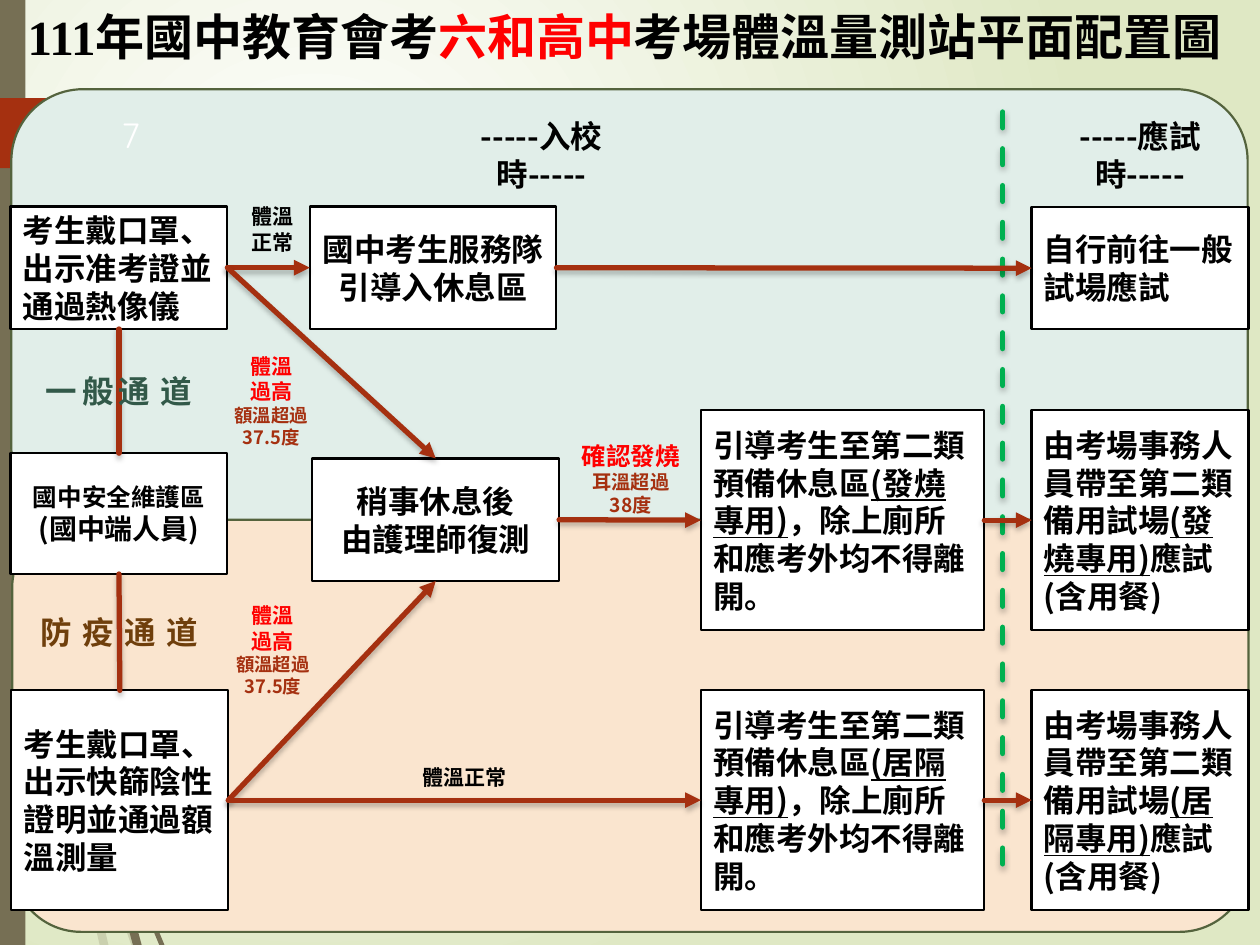
"""Builds the exam-site temperature screening flow chart slide."""
from dataclasses import dataclass
from typing import Optional

from lxml import etree
from pptx import Presentation
from pptx.dml.color import RGBColor
from pptx.enum import dml, shapes, text
from pptx.oxml import ns
from pptx.util import Pt

BLACK = RGBColor(0x00, 0x00, 0x00)
WHITE = RGBColor(0xFF, 0xFF, 0xFF)
RED = RGBColor(0xFF, 0x00, 0x00)
RUST = RGBColor(0xA5, 0x30, 0x10)
GREEN = RGBColor(0x00, 0xB0, 0x50)
OLIVE = RGBColor(0x54, 0x63, 0x3D)
TAUPE = RGBColor(0x76, 0x6F, 0x54)
PALE_TAUPE = RGBColor(0xCA, 0xD0, 0xAE)
PALE_LIME = RGBColor(0xDF, 0xE8, 0xC4)
MINT = RGBColor(0xE1, 0xEE, 0xE9)
PEACH = RGBColor(0xFA, 0xE5, 0xCF)
PINE = RGBColor(0x32, 0x59, 0x49)
BROWN = RGBColor(0x6F, 0x3F, 0x0C)

CJK = "Noto Sans CJK JP"
LEFT, CENTER, RIGHT = text.PP_ALIGN.LEFT, text.PP_ALIGN.CENTER, text.PP_ALIGN.RIGHT
TOP, MIDDLE = text.MSO_ANCHOR.TOP, text.MSO_ANCHOR.MIDDLE
SITE_TOP, SITE_LEFT, SITE_BOTTOM, SITE_RIGHT = range(4)
ENTRY_X, EXAM_X, LOUNGE_X = 6, 589.5, 400.5
SIDE_W, MID_W, LOUNGE_W = 124, 141, 162
LOW_H, TALL_H = 70, 125.5
GENERAL_Y, FEVER_Y, ISOLATION_Y = 118, 234.5, 394.5


@dataclass
class Phrase:
    words: str
    size: Optional[float] = None
    color: Optional[RGBColor] = None
    underline: bool = False
    spacing: int = 0


@dataclass
class Line:
    phrases: list[Phrase]
    size: float = 18
    color: RGBColor = BLACK
    align: text.PP_ALIGN = LEFT
    font: str = CJK
    bold: bool = True


@dataclass
class Block:
    x: float
    y: float
    w: float
    h: float
    lines: list[Line]
    anchor: text.MSO_ANCHOR = MIDDLE


@dataclass
class Link:
    start: str
    start_site: int
    end: str
    end_site: int
    arrow: bool = True


def centered(words: str, size: float = 18, color: RGBColor = BLACK) -> Line:
    return Line([Phrase(words)], size, color, CENTER)


def high_label(x: float, y: float) -> Block:
    return Block(x, y, 72, 63.5, [centered("體溫", 12, RED), centered("過高", 12, RED),
                                  centered("額溫超過37.5度", 10.5, RUST)], TOP)


def lounge(y: float, use: str) -> Block:
    return Block(LOUNGE_X, y, LOUNGE_W, TALL_H, [Line([
        Phrase("引導考生至第二類預備休息區"), Phrase(f"({use}專用)", underline=True),
        Phrase("，除上廁所和應考外均不得離開。")])])


def exam_room(y: float, use: str) -> Block:
    return Block(EXAM_X, y, SIDE_W, TALL_H, [Line([
        Phrase("由考場事務人員帶至第二類備用試場"), Phrase(f"({use}專用)", underline=True),
        Phrase("應試(含用餐)")])])


def channel(y: float, color: RGBColor, phrases: list[Phrase]) -> Block:
    return Block(ENTRY_X, y, SIDE_W, 29, [Line(phrases, 18, color, CENTER, "Quicksand")], TOP)


STATIONS = {
    "general entry": Block(ENTRY_X, GENERAL_Y, SIDE_W, LOW_H,
                           [Line([Phrase("考生戴口罩、出示准考證並通過熱像儀")])]),
    "service team": Block(177, GENERAL_Y, MID_W, LOW_H, [centered("國中考生服務隊引導入休息區")]),
    "recheck": Block(178.5, 262, MID_W, LOW_H, [centered("稍事休息後"), centered("由護理師復測")]),
    "general exam": Block(EXAM_X, GENERAL_Y + 0.5, SIDE_W, 69.5, [Line([Phrase("自行前往一般試場應試")])]),
    "security": Block(ENTRY_X, 259, SIDE_W, 69, [
        Line([Phrase("國中安全維護區", 14), Phrase("(國中端人員)", 16)], align=CENTER)]),
    "isolation entry": Block(ENTRY_X + 0.5, ISOLATION_Y, SIDE_W, TALL_H,
                             [Line([Phrase("考生戴口罩、出示快篩陰性證明並通過額溫測量")])]),
    "fever lounge": lounge(FEVER_Y, "發燒"),
    "fever exam": exam_room(FEVER_Y, "發燒"),
    "isolation lounge": lounge(ISOLATION_Y, "居隔"),
    "isolation exam": exam_room(ISOLATION_Y, "居隔"),
}

LINKS = [
    Link("general entry", SITE_RIGHT, "service team", SITE_LEFT),
    Link("general entry", SITE_RIGHT, "recheck", SITE_TOP),
    Link("service team", SITE_RIGHT, "general exam", SITE_LEFT),
    Link("recheck", SITE_RIGHT, "fever lounge", SITE_LEFT),
    Link("fever lounge", SITE_RIGHT, "fever exam", SITE_LEFT),
    Link("security", SITE_TOP, "general entry", SITE_BOTTOM, False),
    Link("isolation entry", SITE_TOP, "security", SITE_BOTTOM, False),
    Link("isolation entry", SITE_RIGHT, "recheck", SITE_BOTTOM),
    Link("isolation entry", SITE_RIGHT, "isolation lounge", SITE_LEFT),
    Link("isolation lounge", SITE_RIGHT, "isolation exam", SITE_LEFT),
]

LABELS = [
    Block(0, 0, 720, 41, [Line([Phrase("111年國中教育會考"), Phrase("六和高中", color=RED),
                                Phrase("考場體溫量測站平面配置圖 ")], 28, BLACK, CENTER, "Times New Roman")], TOP),
    Block(50, 63, 37, 28, [Line([Phrase("7")], 20, WHITE, RIGHT, "Quicksand", False)]),
    Block(119.5, 113, 72, 36, [centered("體溫", 12), centered("正常", 12)], TOP),
    high_label(119, 198.5),
    high_label(120, 341),
    Block(305.5, 248.5, 110, 51, [centered("確認發燒", 14, RED), centered("耳溫超過", 11, RUST),
                                  centered("38度", 11, RUST)], TOP),
    Block(EXAM_X, 63.5, SIDE_W, 50.5, [centered("-----應試時-----")]),
    Block(247.5, 63.5, SIDE_W, 50.5, [centered("-----入校時-----")]),
    Block(229.5, 433.5, 72, 22, [centered("體溫正常", 12)], TOP),
    channel(209, PINE, [Phrase("一般", spacing=3), Phrase("通道", spacing=6)]),
    channel(347, BROWN, [Phrase("防疫通道", spacing=6)]),
]


def add_child(parent, tag: str, **attributes: str):
    return etree.SubElement(parent, ns.qn(tag), attributes)


def write(shape, block: Block) -> None:
    frame = shape.text_frame
    frame.word_wrap = True
    frame.vertical_anchor = block.anchor
    for index, line in enumerate(block.lines):
        paragraph = frame.add_paragraph() if index else frame.paragraphs[0]
        paragraph.alignment = line.align
        font = paragraph.font
        font.size, font.bold, font.name = Pt(line.size), line.bold, line.font
        font.color.rgb = line.color
        add_child(paragraph._p.pPr.find(ns.qn("a:defRPr")), "a:ea", typeface=CJK)
        for phrase in line.phrases:
            run = paragraph.add_run()
            run.text = phrase.words
            if phrase.size:
                run.font.size = Pt(phrase.size)
            if phrase.color is not None:
                run.font.color.rgb = phrase.color
            if phrase.underline:
                run.font.underline = True
            if phrase.spacing:
                run._r.get_or_add_rPr().set("spc", str(phrase.spacing * 100))


def paint(shape, fill: RGBColor, outline: Optional[RGBColor] = None) -> None:
    shape.shadow.inherit = False
    shape.fill.solid()
    shape.fill.fore_color.rgb = fill
    if outline is None:
        shape.line.fill.background()
    else:
        shape.line.color.rgb, shape.line.width = outline, Pt(1.25)


def add_figure(slide, kind, x: float, y: float, w: float, h: float,
               fill: RGBColor, outline: Optional[RGBColor] = None):
    shape = slide.shapes.add_shape(kind, Pt(x), Pt(y), Pt(w), Pt(h))
    paint(shape, fill, outline)
    return shape


def style_connector(connector, color: RGBColor, arrow: bool = False, dashed: bool = False) -> None:
    connector.line.color.rgb, connector.line.width = color, Pt(3)
    if dashed:
        connector.line.dash_style = dml.MSO_LINE.DASH
    outline = connector.line._get_or_add_ln()
    outline.set("cap", "rnd")
    if arrow:
        add_child(outline, "a:tailEnd", type="triangle")
    effects = add_child(connector._element.spPr, "a:effectLst")
    shadow = add_child(effects, "a:outerShdw", blurRad=str(Pt(3)), dist=str(Pt(2)), dir="5400000", rotWithShape="0")
    add_child(add_child(shadow, "a:srgbClr", val=str(BLACK)), "a:alpha", val="25000")


def add_backdrop(slide) -> None:
    fill = slide.background.fill
    fill.gradient()
    for position, (stop, color) in enumerate(zip(fill.gradient_stops, (WHITE, PALE_LIME))):
        stop.color.rgb, stop.position = color, position
    gradient = slide.element.find(f".//{ns.qn('a:gradFill')}")
    circle = etree.Element(ns.qn("a:path"), {"path": "circle"})
    add_child(circle, "a:fillToRect", l="50000", t="50000", r="100000", b="100000")
    gradient.replace(gradient.find(ns.qn("a:lin")), circle)
    for top_x, top_y, foot_x, width, color in ((51, 514, 57, 5, PALE_TAUPE), (61, 499, 75, 3, PALE_TAUPE),
                                               (70, 518, 76, 5, TAUPE), (78.5, 510, 91, 3, TAUPE)):
        stem = slide.shapes.build_freeform(Pt(top_x), Pt(top_y))
        stem.add_line_segments([(Pt(x), Pt(y)) for x, y in (
            (top_x + width, top_y), (foot_x + width, 540), (foot_x, 540))])
        paint(stem.convert_to_shape(), color)
    add_figure(slide, shapes.MSO_SHAPE.RECTANGLE, 0, 0, 14.5, 540, TAUPE)
    add_figure(slide, shapes.MSO_SHAPE.PENTAGON, 0, 56, 107.5, 40, RUST)
    add_figure(slide, shapes.MSO_SHAPE.ROUNDED_RECTANGLE, 7, 296.5, 706.5, 236, PEACH, OLIVE)
    add_figure(slide, shapes.MSO_SHAPE.ROUNDED_RECTANGLE, 6.5, 51, 706.5, 246, MINT, OLIVE)


def main() -> None:
    deck = Presentation()
    deck.slide_width, deck.slide_height = Pt(720), Pt(540)
    slide = deck.slides.add_slide(deck.slide_layouts[6])
    add_backdrop(slide)
    boxes = {}
    for name, block in STATIONS.items():
        boxes[name] = add_figure(slide, shapes.MSO_SHAPE.RECTANGLE, block.x, block.y, block.w, block.h, WHITE, BLACK)
        write(boxes[name], block)
    divider = slide.shapes.add_connector(shapes.MSO_CONNECTOR.STRAIGHT, Pt(573), Pt(64), Pt(573), Pt(495.5))
    style_connector(divider, GREEN, dashed=True)
    for link in LINKS:
        connector = slide.shapes.add_connector(shapes.MSO_CONNECTOR.STRAIGHT, 0, 0, 0, 0)
        connector.begin_connect(boxes[link.start], link.start_site)
        connector.end_connect(boxes[link.end], link.end_site)
        style_connector(connector, RUST, link.arrow)
    for block in LABELS:
        write(slide.shapes.add_textbox(Pt(block.x), Pt(block.y), Pt(block.w), Pt(block.h)), block)
    deck.save("out.pptx")


if __name__ == "__main__":
    main()
